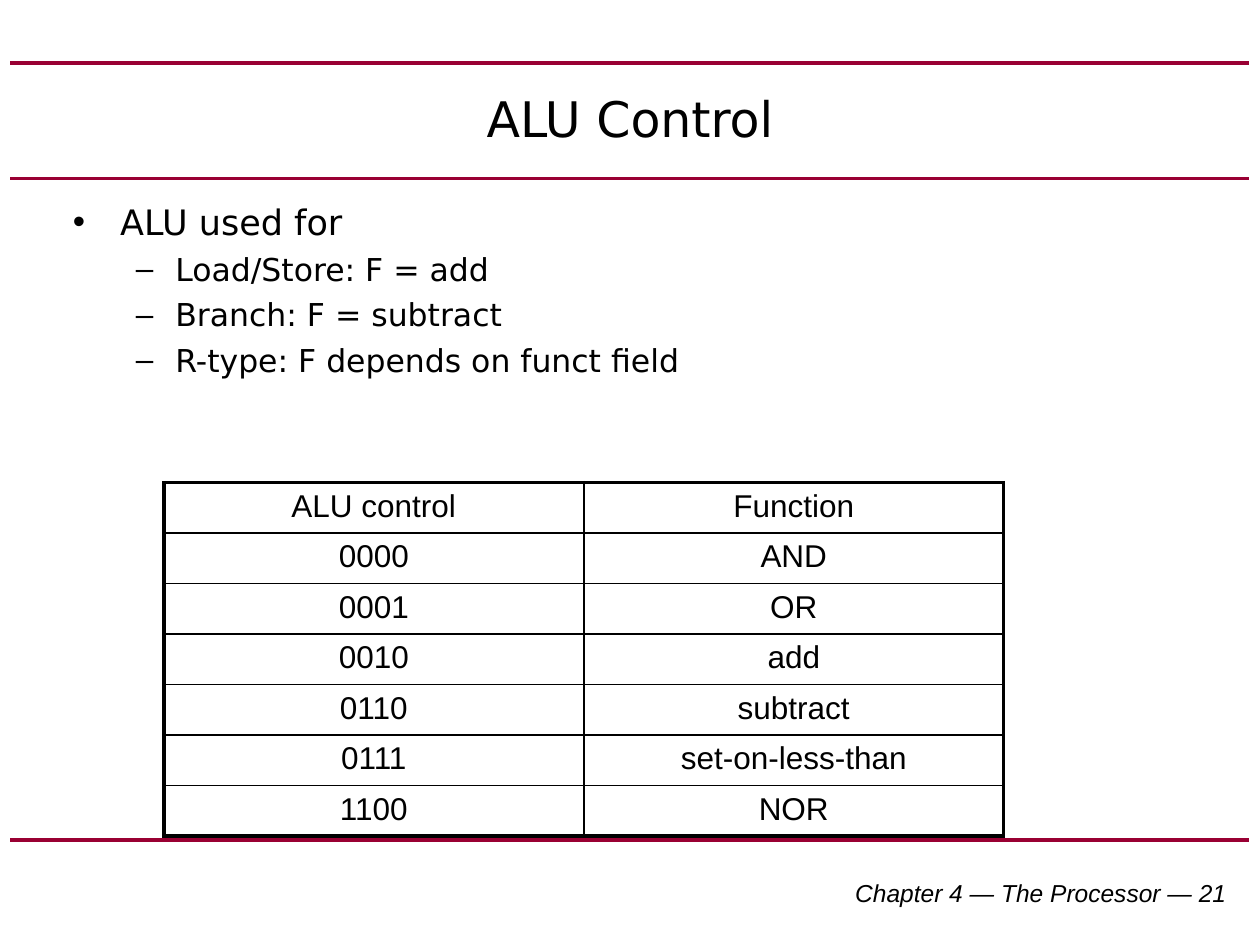
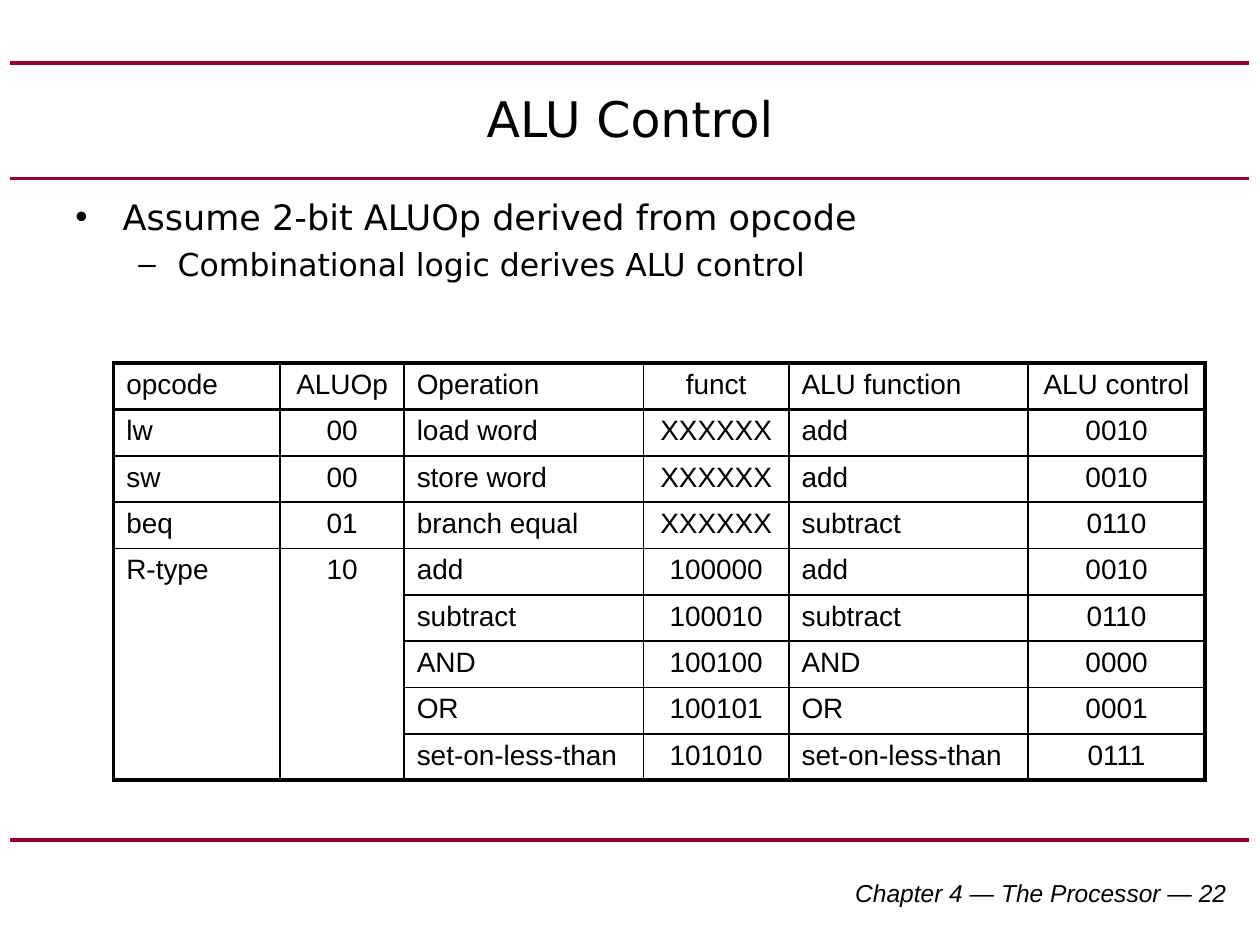
from dataclasses import dataclass

from lxml.etree import SubElement
from pptx import Presentation
from pptx.dml.color import RGBColor
from pptx.enum.shapes import MSO_CONNECTOR
from pptx.enum.text import MSO_ANCHOR, PP_ALIGN
from pptx.oxml.ns import qn
from pptx.slide import Slide
from pptx.table import Table
from pptx.util import Pt

COLORS = {"rule": "990033", "ink": "000000"}
BODY_FONT = "DejaVu Sans"
TABLE_FONT = "Arial"
RULE_HEIGHTS = (36, 102, 480)
OUTER, HEADER, INNER = 2.25, 1.5, 1
ALIGNMENTS = {"l": PP_ALIGN.LEFT, "c": PP_ALIGN.CENTER, "r": PP_ALIGN.RIGHT}


@dataclass(frozen=True)
class BulletLevel:
    mark: str
    margin: float
    hanging: float
    size: float


LEVELS = (BulletLevel("•", 27, 27, 20), BulletLevel("–", 58.5, 22.5, 18))


@dataclass(frozen=True)
class Bullet:
    text: str
    level: int = 0


@dataclass(frozen=True)
class Grid:
    left: float
    top: float
    widths: tuple[float, ...]
    row_height: float
    size: float
    aligns: str
    rows: tuple[tuple[str, ...], ...]
    merged: tuple[tuple[int, int, int], ...] = ()  # column, first row, last row


@dataclass(frozen=True)
class Lesson:
    number: int
    body: tuple[float, float, float, float]
    bullets: tuple[Bullet, ...]
    grid: Grid


LESSONS = (
    Lesson(
        21,
        (34.6, 111, 651.6, 187.2),
        (
            Bullet("ALU used for"),
            Bullet("Load/Store: F = add", 1),
            Bullet("Branch: F = subtract", 1),
            Bullet("R-type: F depends on funct field", 1),
        ),
        Grid(93.6, 275.8, (240, 240), 28.8, 18, "cc", (
            ("ALU control", "Function"),
            ("0000", "AND"),
            ("0001", "OR"),
            ("0010", "add"),
            ("0110", "subtract"),
            ("0111", "set-on-less-than"),
            ("1100", "NOR"),
        )),
    ),
    Lesson(
        22,
        (36, 108, 648, 365.8),
        (
            Bullet("Assume 2-bit ALUOp derived from opcode"),
            Bullet("Combinational logic derives ALU control", 1),
        ),
        Grid(65, 207.5, (95, 71, 136.7, 83.2, 136.7, 101), 26.5, 16, "lclclc", (
            ("opcode", "ALUOp", "Operation", "funct", "ALU function", "ALU control"),
            ("lw", "00", "load word", "XXXXXX", "add", "0010"),
            ("sw", "00", "store word", "XXXXXX", "add", "0010"),
            ("beq", "01", "branch equal", "XXXXXX", "subtract", "0110"),
            ("R-type", "10", "add", "100000", "add", "0010"),
            ("", "", "subtract", "100010", "subtract", "0110"),
            ("", "", "AND", "100100", "AND", "0000"),
            ("", "", "OR", "100101", "OR", "0001"),
            ("", "", "set-on-less-than", "101010", "set-on-less-than", "0111"),
        ), merged=((0, 4, 8), (1, 4, 8))),
    ),
)


def write(para, text: str, *, size: float, font: str = BODY_FONT,
          align: str = "l", italic: bool = False) -> None:
    para.alignment = ALIGNMENTS[align]
    span = para.add_run()
    span.text = text
    span.font.size = Pt(size)
    span.font.name = font
    span.font.italic = italic
    span.font.color.rgb = RGBColor.from_string(COLORS["ink"])


def add_frame(page: Slide, left: float, top: float, width: float, height: float,
              anchor: MSO_ANCHOR = MSO_ANCHOR.TOP):
    box = page.shapes.add_textbox(Pt(left), Pt(top), Pt(width), Pt(height))
    frame = box.text_frame
    frame.word_wrap = True
    frame.vertical_anchor = anchor
    return frame


def add_rule(page: Slide, height: float) -> None:
    rule = page.shapes.add_connector(
        MSO_CONNECTOR.STRAIGHT, Pt(6), Pt(height), Pt(714), Pt(height))
    rule.line.color.rgb = RGBColor.from_string(COLORS["rule"])
    rule.line.width = Pt(2.25)
    SubElement(rule._element.spPr, qn("a:effectLst"))


def add_bullets(page: Slide, lesson: Lesson) -> None:
    frame = add_frame(page, *lesson.body)
    for index, bullet in enumerate(lesson.bullets):
        para = frame.add_paragraph() if index else frame.paragraphs[0]
        level = LEVELS[bullet.level]
        para.level = bullet.level
        if index:
            para.space_before = Pt(4.3)
        properties = para._p.get_or_add_pPr()
        properties.set("marL", str(Pt(level.margin)))
        properties.set("indent", str(-Pt(level.hanging)))
        SubElement(properties, qn("a:buFont"), typeface="Arial")
        SubElement(properties, qn("a:buChar"), char=level.mark)
        write(para, bullet.text, size=level.size)


def set_border(cell, side: str, width: float) -> None:
    line = SubElement(cell._tc.get_or_add_tcPr(), qn(f"a:ln{side}"), w=str(Pt(width)))
    fill = SubElement(line, qn("a:solidFill"))
    SubElement(fill, qn("a:srgbClr"), val=COLORS["ink"])


def draw_borders(table: Table, row: int, column: int) -> None:
    """Thick outside, medium under the header, thin inside; none within merged cells."""
    cell = table.cell(row, column)
    last_row, last_column = len(table.rows) - 1, len(table.columns) - 1
    bottom_row = row + cell.span_height - 1 if cell.is_merge_origin else row
    set_border(cell, "L", INNER if column else OUTER)
    set_border(cell, "R", INNER if column < last_column else OUTER)
    if not cell.is_spanned:
        set_border(cell, "T", {0: OUTER, 1: HEADER}.get(row, INNER))
    if bottom_row == last_row:
        set_border(cell, "B", OUTER)
    elif not cell.is_spanned:
        set_border(cell, "B", INNER if row else HEADER)


def add_grid(page: Slide, grid: Grid) -> None:
    table = page.shapes.add_table(
        len(grid.rows), len(grid.widths), Pt(grid.left), Pt(grid.top),
        Pt(sum(grid.widths)), Pt(grid.row_height * len(grid.rows))).table
    table.first_row = table.horz_banding = False
    for column, width in zip(table.columns, grid.widths):
        column.width = Pt(width)
    for row in table.rows:
        row.height = Pt(grid.row_height)
    for column, first, last in grid.merged:
        table.cell(first, column).merge(table.cell(last, column))
    for row, texts in enumerate(grid.rows):
        for column, text in enumerate(texts):
            cell = table.cell(row, column)
            draw_borders(table, row, column)
            cell.fill.background()
            if text:
                write(cell.text_frame.paragraphs[0], text, size=grid.size,
                      font=TABLE_FONT, align=grid.aligns[column])


def add_page(deck, lesson: Lesson) -> None:
    page = deck.slides.add_slide(deck.slide_layouts[6])
    for height in RULE_HEIGHTS:
        add_rule(page, height)
    footer = add_frame(page, 270, 498, 438, 24)
    write(footer.paragraphs[0], f"Chapter 4 — The Processor — {lesson.number}",
          size=14, font=TABLE_FONT, align="r", italic=True)
    title = add_frame(page, 36, 36, 648, 63, MSO_ANCHOR.MIDDLE)
    write(title.paragraphs[0], "ALU Control", size=28, align="c")
    add_bullets(page, lesson)
    add_grid(page, lesson.grid)


def main() -> None:
    deck = Presentation()
    deck.slide_width, deck.slide_height = Pt(720), Pt(540)
    for lesson in LESSONS:
        add_page(deck, lesson)
    deck.save("out.pptx")


if __name__ == "__main__":
    main()
